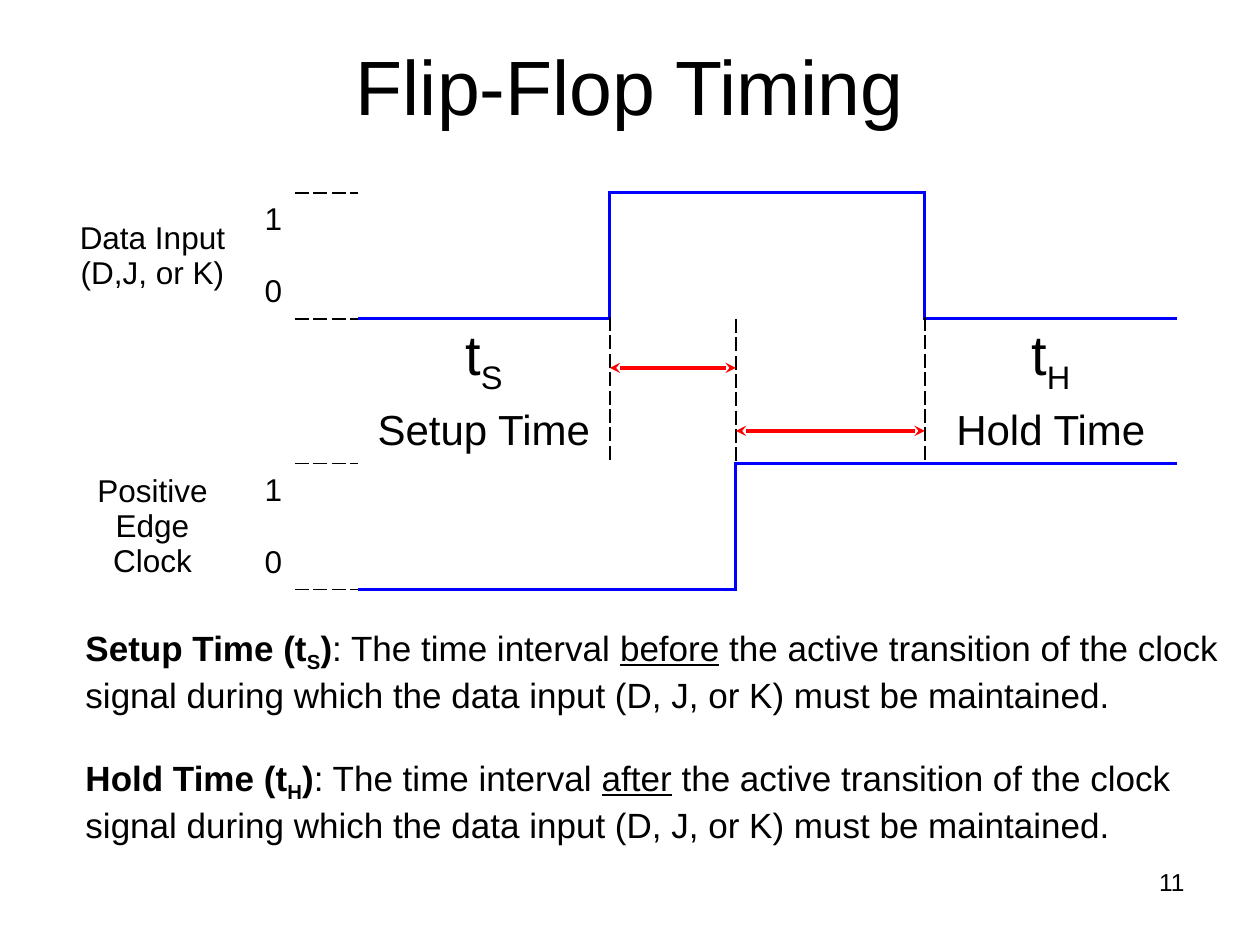
"""Build the flip-flop timing slide: a waveform table, two interval arrows and definitions."""
from lxml.etree import SubElement
from pptx import Presentation
from pptx.dml.color import RGBColor
from pptx.enum.shapes import MSO_CONNECTOR
from pptx.enum.text import MSO_ANCHOR, PP_ALIGN
from pptx.oxml.ns import qn
from pptx.util import Inches, Pt

FONT, BLACK, WHITE, BLUE, RED = "Arial", "000000", "FFFFFF", "0000FF", "FF0000"
CENTER, RIGHT, LEFT = PP_ALIGN.CENTER, PP_ALIGN.RIGHT, PP_ALIGN.LEFT
SIGNAL, GUIDE = (BLUE, 2.25, "solid"), (BLACK, 1, "dash")
TABLE_LEFT, TABLE_TOP = 0.5, 1.53
COLUMNS = [1.42, 0.42] + [0.5] * 14
ROWS = [1, 1.15, 1, 0.4]
SPANS = {(1, 3): 4, (1, 12): 4}

# Edges are (grid line, first cell, end cell, style).
HORIZONTAL = [(line, 2, 3, GUIDE) for line in range(4)] + [
    (1, 3, 7, SIGNAL), (0, 7, 12, SIGNAL), (1, 12, 16, SIGNAL),
    (3, 3, 9, SIGNAL), (2, 9, 16, SIGNAL),
]
VERTICAL = [(7, 0, 1, SIGNAL), (12, 0, 1, SIGNAL), (9, 2, 3, SIGNAL)] + [
    (line, 1, 2, GUIDE) for line in (7, 9, 12)
]
ARROWS = [(7, 9, 2.92), (9, 12, 3.42)]


def plain(text):
    return [(text, {})]


def interval(letter, name):
    symbol = [("t", {"size": 32}), (letter, {"size": 32, "baseline": -25})]
    return [({"space_after": 6, "indent": -0.17}, symbol),
            ({"space_after": 6}, [(name, {"size": 24})])]


def definition(name, letter, relation):
    bold = {"bold": True}
    return [
        (f"{name} (t", bold), (letter, {**bold, "baseline": -25}), (")", bold),
        (": The time interval ", {}), (relation, {"underline": True}),
        (" the active transition of the clock signal during which the data input "
         "(D, J, or K) must be maintained.", {}),
    ]


LEVELS = [({}, plain("1")), ({"space_before": 20.7}, plain("0"))]
CELLS = {
    (0, 0): (CENTER, [({}, plain(line)) for line in ("Data Input", "(D,J, or K)")]),
    (0, 1): (RIGHT, LEVELS),
    (1, 3): (CENTER, interval("S", "Setup Time")),
    (1, 12): (CENTER, interval("H", "Hold Time")),
    (2, 0): (CENTER, [({}, plain(line)) for line in ("Positive", "Edge", "Clock")]),
    (2, 1): (RIGHT, LEVELS),
}
BOXES = [
    ((0, 0, 10, 1.34), MSO_ANCHOR.MIDDLE, CENTER, 44, [({}, plain("Flip-Flop Timing"))]),
    ((7.17, 6.83, 2.33, 0.52), MSO_ANCHOR.TOP, RIGHT, 14, [({}, plain("11"))]),
    ((0.58, 4.92, 9.42, 1.77), MSO_ANCHOR.TOP, LEFT, 20, [
        ({}, definition("Setup Time", "S", "before")),
        ({"space_before": 23}, definition("Hold Time", "H", "after")),
    ]),
]


def color(value):
    return RGBColor.from_string(value)


def write(frame, alignment, size, paragraphs):
    for index, (layout, runs) in enumerate(paragraphs):
        paragraph = frame.paragraphs[0] if index == 0 else frame.add_paragraph()
        paragraph.alignment = alignment
        for name, value in layout.items():
            if name == "indent":
                paragraph._p.get_or_add_pPr().set("indent", str(Inches(value)))
            else:
                setattr(paragraph, name, Pt(value))
        for text, style in runs:
            run = paragraph.add_run()
            run.text = text
            values = {"name": FONT, "size": size, **style}
            baseline = values.pop("baseline", None)
            values["size"] = Pt(values["size"])
            for name, value in values.items():
                setattr(run.font, name, value)
            run.font.color.rgb = color(BLACK)
            if baseline:
                run._r.get_or_add_rPr().set("baseline", str(baseline * 1000))


def cell_borders():
    borders = {}

    def add(row, column, side, style):
        borders[row, column, side] = style
        for (span_row, start), width in SPANS.items():
            if row == span_row and start <= column < start + width:
                borders[row, start, side] = style

    for line, first, end, style in HORIZONTAL:
        for column in range(first, end):
            add(line - 1, column, "B", style)
            add(line, column, "T", style)
    for line, first, end, style in VERTICAL:
        for row in range(first, end):
            add(row, line - 1, "R", style)
            add(row, line, "L", style)
    return borders


def draw_border(cell, side, style):
    line = SubElement(cell._tc.get_or_add_tcPr(), qn(f"a:ln{side}"))
    if style is None:
        SubElement(line, qn("a:noFill"))
        return
    value, width, dash = style
    line.set("w", str(Pt(width)))
    fill = SubElement(line, qn("a:solidFill"))
    SubElement(fill, qn("a:srgbClr")).set("val", value)
    SubElement(line, qn("a:prstDash")).set("val", dash)


def add_waveforms(slide):
    area = map(Inches, (TABLE_LEFT, TABLE_TOP, sum(COLUMNS), sum(ROWS)))
    table = slide.shapes.add_table(len(ROWS), len(COLUMNS), *area).table
    table.first_row = table.horz_banding = False
    for column, width in zip(table.columns, COLUMNS):
        column.width = Inches(width)
    for row, height in zip(table.rows, ROWS):
        row.height = Inches(height)
    for (row, column), width in SPANS.items():
        table.cell(row, column).merge(table.cell(row, column + width - 1))
    borders = cell_borders()
    for row in range(len(ROWS)):
        for column in range(len(COLUMNS)):
            cell = table.cell(row, column)
            for side in "LRTB":
                draw_border(cell, side, borders.get((row, column, side)))
            cell.fill.solid()
            cell.fill.fore_color.rgb = color(WHITE)
    for (row, column), (alignment, paragraphs) in CELLS.items():
        cell = table.cell(row, column)
        if (row, column) not in SPANS:
            cell.vertical_anchor = MSO_ANCHOR.MIDDLE
        write(cell.text_frame, alignment, 18, paragraphs)


def add_arrow(slide, first, end, height):
    start_x, end_x = (TABLE_LEFT + sum(COLUMNS[:line]) for line in (first, end))
    points = map(Inches, (start_x, height, end_x, height))
    arrow = slide.shapes.add_connector(MSO_CONNECTOR.STRAIGHT, *points)
    arrow.line.color.rgb = color(RED)
    arrow.line.width = Pt(2)
    line = arrow.line._get_or_add_ln()
    for end_name in ("headEnd", "tailEnd"):
        SubElement(line, qn(f"a:{end_name}")).set("type", "stealth")
    SubElement(arrow._element.spPr, qn("a:effectLst"))


def main():
    presentation = Presentation()
    presentation.slide_width, presentation.slide_height = Inches(10), Inches(7.5)
    slide = presentation.slides.add_slide(presentation.slide_layouts[6])
    add_waveforms(slide)
    for arrow in ARROWS:
        add_arrow(slide, *arrow)
    for area, anchor, alignment, size, paragraphs in BOXES:
        frame = slide.shapes.add_textbox(*map(Inches, area)).text_frame
        frame.word_wrap = True
        frame.vertical_anchor = anchor
        write(frame, alignment, size, paragraphs)
    presentation.save("out.pptx")


if __name__ == "__main__":
    main()
